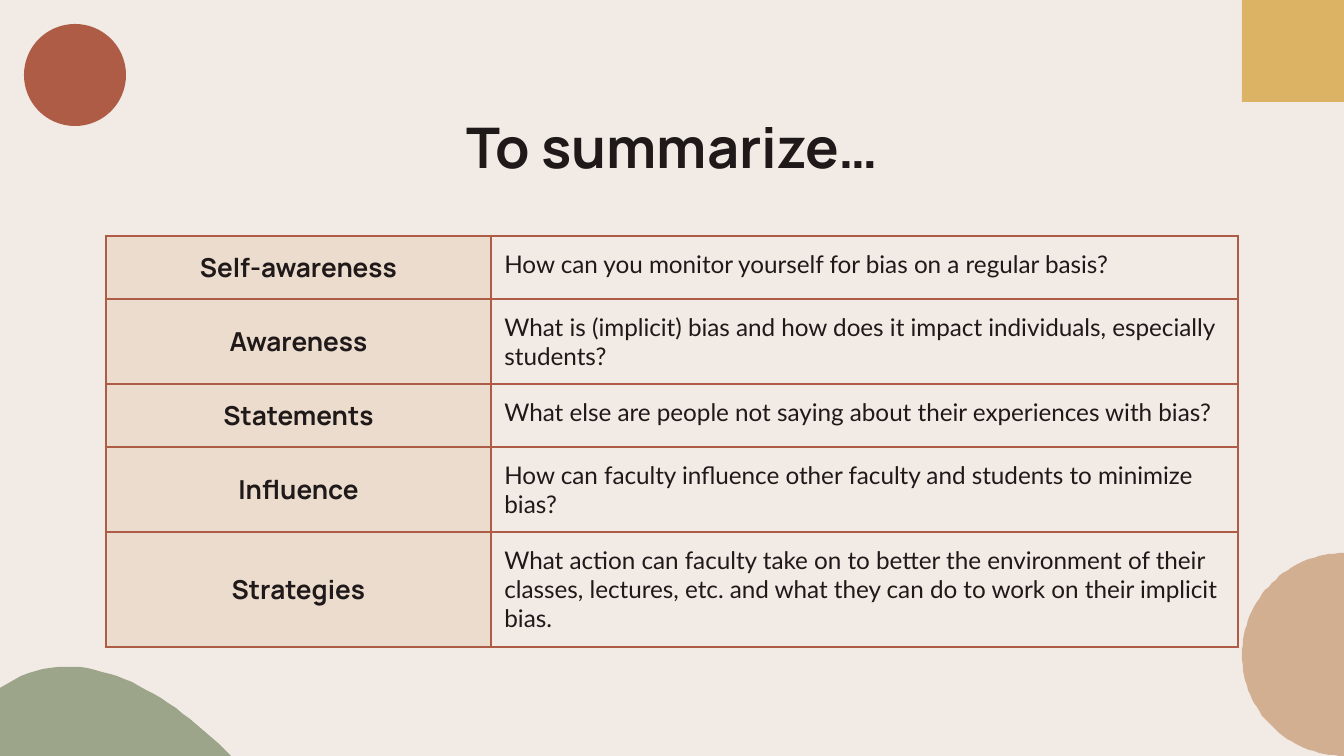
import lxml.etree
import pptx
import pptx.dml.color
import pptx.enum.shapes
import pptx.enum.text
import pptx.oxml.ns
import pptx.util

EMU_PER_PX = 914400 / 134.4
SLIDE_WIDTH, SLIDE_HEIGHT = 1344, 756
COLORS = {
    "background": "F1EAE5",
    "text": "1F191A",
    "rust": "AF5C46",
    "gold": "DCB364",
    "tan": "D3AF92",
    "sage": "9CA589",
    "label": "ECDCCD",
}
COLUMN_WIDTHS = [385, 747]
ROWS = [
    (63, "Self-awareness", "How can you monitor yourself for bias on a regular basis?"),
    (85, "Awareness", "What is (implicit) bias and how does it impact individuals, "
                      "especially students?"),
    (62, "Statements", "What else are people not saying about their experiences with bias?"),
    (85, "Influence", "How can faculty influence other faculty and students to "
                      "minimize bias?"),
    (115, "Strategies", "What action can faculty take on to better the environment of "
                        "their classes, lectures, etc. and what they can do to work on "
                        "their implicit bias."),
]


def px(length):
    return pptx.util.Emu(round(length * EMU_PER_PX))


def rgb(name):
    return pptx.dml.color.RGBColor.from_string(COLORS[name])


def paint(fill, color):
    fill.solid()
    fill.fore_color.rgb = rgb(color)


def style_decoration(shape, color):
    paint(shape.fill, color)
    shape.line.fill.background()
    shape.shadow.inherit = False


def add_preset(slide, kind, left, top, size, color):
    shape = slide.shapes.add_shape(kind, px(left), px(top), px(size), px(size))
    style_decoration(shape, color)


def curve_points(start, control1, control2, end, steps=32):
    """Return points along a cubic Bezier curve, without its start."""
    points = []
    for step in range(1, steps + 1):
        t = step / steps
        weights = ((1 - t) ** 3, 3 * t * (1 - t) ** 2, 3 * t * t * (1 - t), t ** 3)
        points.append(tuple(
            sum(weight * value for weight, value in zip(weights, values))
            for values in zip(start, control1, control2, end)
        ))
    return points


def add_curved_shape(slide, start, curves, corners, color):
    """Add a closed outline of Bezier curves followed by straight corners."""
    points = [start]
    for curve in curves:
        points += curve_points(points[-1], *curve)
    builder = slide.shapes.build_freeform(*start, scale=EMU_PER_PX)
    builder.add_line_segments(points[1:] + corners, close=True)
    style_decoration(builder.convert_to_shape(), color)


def set_text(text_frame, text, font_name, size, bold, alignment):
    text_frame.text = text
    paragraph = text_frame.paragraphs[0]
    paragraph.alignment = alignment
    font = paragraph.runs[0].font
    font.name = font_name
    font.size = pptx.util.Pt(size)
    font.bold = bold
    font.color.rgb = rgb("text")


def add_title(slide, text):
    title = slide.shapes.title
    title.left, title.top, title.width, title.height = map(px, (106, 99, 1133, 70))
    frame = title.text_frame
    frame.margin_left = frame.margin_right = pptx.util.Inches(0.1)
    frame.margin_top = frame.margin_bottom = pptx.util.Inches(0.1)
    frame.vertical_anchor = pptx.enum.text.MSO_ANCHOR.TOP
    frame.auto_size = pptx.enum.text.MSO_AUTO_SIZE.NONE
    set_text(frame, text, "Manrope", 30, True, pptx.enum.text.PP_ALIGN.CENTER)


def add_borders(cell, color, width):
    properties = cell._tc.get_or_add_tcPr()
    qualified = pptx.oxml.ns.qn
    for side in ("lnL", "lnR", "lnT", "lnB"):
        line = lxml.etree.SubElement(properties, qualified(f"a:{side}"),
                                     w=str(pptx.util.Pt(width)))
        fill = lxml.etree.SubElement(line, qualified("a:solidFill"))
        lxml.etree.SubElement(fill, qualified("a:srgbClr"), val=COLORS[color])


def format_cell(cell, text, is_label):
    cell.margin_left = cell.margin_right = pptx.util.Inches(0.1)
    cell.margin_top = cell.margin_bottom = pptx.util.Inches(0.1)
    add_borders(cell, "rust", 1.5)
    if is_label:
        cell.vertical_anchor = pptx.enum.text.MSO_ANCHOR.MIDDLE
        paint(cell.fill, "label")
        set_text(cell.text_frame, text, "Manrope", 14, True,
                 pptx.enum.text.PP_ALIGN.CENTER)
    else:
        cell.vertical_anchor = pptx.enum.text.MSO_ANCHOR.TOP
        cell.fill.background()
        set_text(cell.text_frame, text, "Lato", 13, False,
                 pptx.enum.text.PP_ALIGN.LEFT)


def add_summary_table(slide):
    height = sum(row[0] for row in ROWS)
    table = slide.shapes.add_table(len(ROWS), len(COLUMN_WIDTHS), px(106), px(236),
                                   px(sum(COLUMN_WIDTHS)), px(height)).table
    table.first_row = table.horz_banding = False
    for column, width in zip(table.columns, COLUMN_WIDTHS):
        column.width = px(width)
    for row, (row_height, label, question) in zip(table.rows, ROWS):
        row.height = px(row_height)
        format_cell(row.cells[0], label, True)
        format_cell(row.cells[1], question, False)


def add_decorations(slide):
    shapes = pptx.enum.shapes.MSO_SHAPE
    add_curved_shape(slide, (SLIDE_WIDTH, SLIDE_HEIGHT),
                     [((1288, 756), (1242, 711), (1242, 655)),
                      ((1242, 599), (1288, 553), (SLIDE_WIDTH, 553))], [], "tan")
    add_preset(slide, shapes.RECTANGLE, 1242, 0, 102, "gold")
    add_preset(slide, shapes.OVAL, 24, 24, 102, "rust")
    add_curved_shape(slide, (0, 688), [((75, 637), (160, 685), (231, SLIDE_HEIGHT))],
                     [(0, SLIDE_HEIGHT)], "sage")


def main():
    presentation = pptx.Presentation()
    presentation.slide_width = px(SLIDE_WIDTH)
    presentation.slide_height = px(SLIDE_HEIGHT)
    slide = presentation.slides.add_slide(presentation.slide_layouts[5])
    paint(slide.background.fill, "background")
    add_decorations(slide)
    add_title(slide, "To summarize…")
    add_summary_table(slide)
    presentation.save("out.pptx")


if __name__ == "__main__":
    main()
